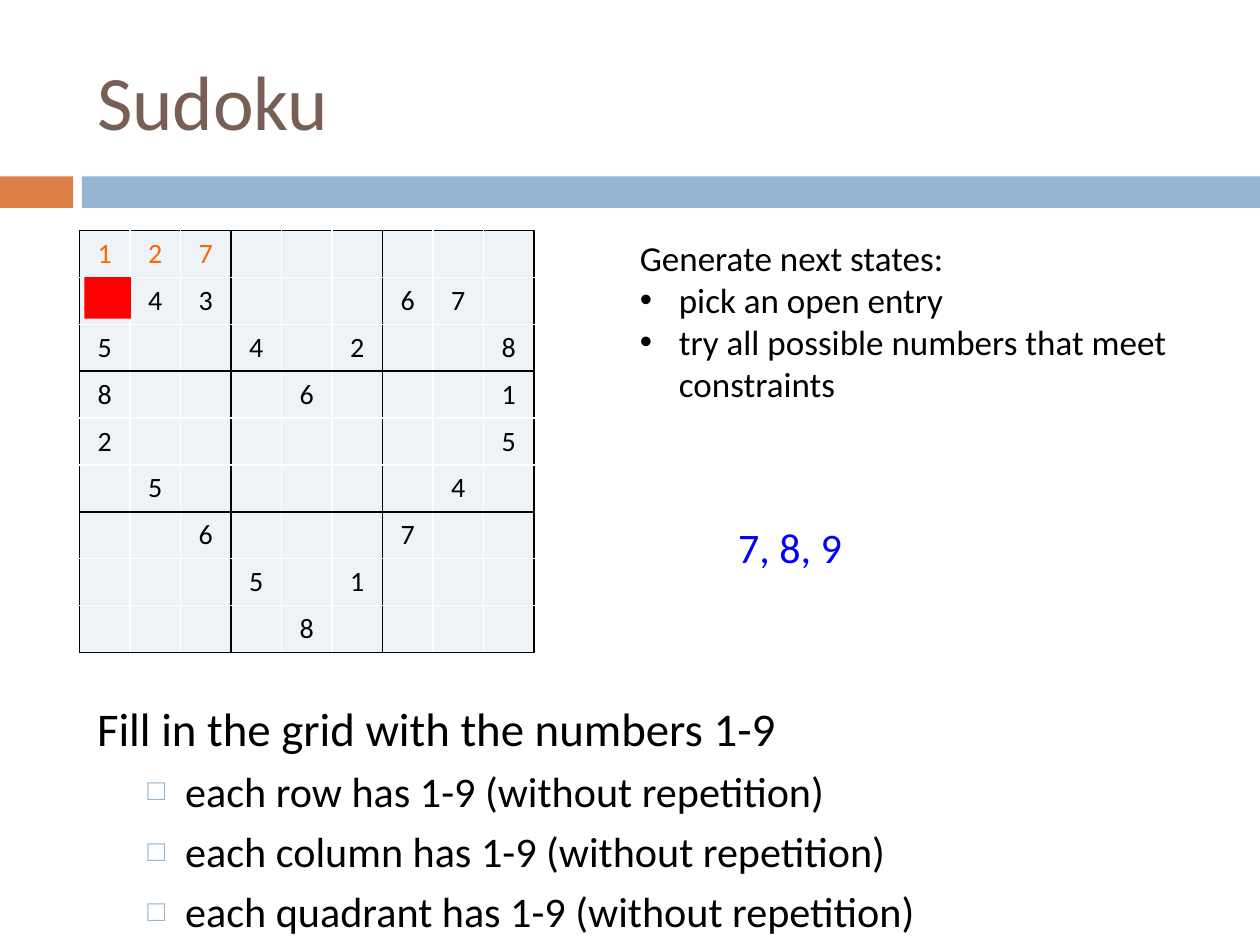
from dataclasses import dataclass
from lxml.etree import SubElement
from pptx import Presentation
from pptx.dml.color import RGBColor
from pptx.enum.shapes import MSO_SHAPE
from pptx.enum.text import MSO_ANCHOR, MSO_AUTO_SIZE, PP_ALIGN
from pptx.oxml import parse_xml
from pptx.oxml.ns import nsdecls, qn
from pptx.util import Inches, Pt

TITLE = "Sudoku"
GRID = [
    "127......",
    ".43...67.",
    "5..4.2..8",
    "8...6...1",
    "2.......5",
    ".5.....4.",
    "..6...7..",
    "...5.1...",
    "....8....",
]
TRIED = 0  # row whose numbers are guesses
GOAL = "Fill in the grid with the numbers 1-9"
RULES = [f"each {part} has 1-9 (without repetition)"
         for part in ("row", "column", "quadrant")]
STEPS_HEAD = "Generate next states:"
STEPS = ["pick an open entry", "try all possible numbers that meet constraints"]
CHOICES = "7, 8, 9"


@dataclass(frozen=True)
class Theme:
    font: str = "Calibri"
    title: str = "775F55"
    accent: str = "DD8047"
    band: str = "94B6D2"
    cell: str = "EEF3F7"
    ink: str = "000000"
    rule: str = "FFFFFF"
    guess: str = "FF6600"
    open: str = "FF0000"
    choice: str = "0000FF"
    title_size: float = 44
    goal_size: float = 26.8
    rule_size: float = 24.1
    step_size: float = 20
    choice_size: float = 24
    cell_size: float = 16


T = Theme()


def style(para, size, color=T.ink):
    font = para.font
    font.name, font.size = T.font, Pt(size)
    font.color.rgb = RGBColor.from_string(color)


def place(shape, left, top, width, height):
    shape.left, shape.top = Inches(left), Inches(top)
    shape.width, shape.height = Inches(width), Inches(height)


def block(slide, color, *box):
    shape = slide.shapes.add_shape(MSO_SHAPE.RECTANGLE, *map(Inches, box))
    shape.shadow.inherit = False
    shape.fill.solid()
    shape.fill.fore_color.rgb = RGBColor.from_string(color)
    shape.line.fill.background()


def bullet(para, char, left, hang, color=None, scale=None):
    """Set indent and bullet; no char means no bullet."""
    props = para._p.get_or_add_pPr()
    props.set("marL", str(Inches(left)))
    props.set("indent", str(Inches(-hang)))
    marks = []
    if color:
        marks.append(f'<a:buClr {nsdecls("a")}><a:srgbClr val="{color}"/></a:buClr>')
    if scale:
        marks.append(f'<a:buSzPct {nsdecls("a")} val="{scale * 1000}"/>')
    if char:
        marks.append(f'<a:buFont {nsdecls("a")} typeface="Arial"/>')
        marks.append(f'<a:buChar {nsdecls("a")} char="{char}"/>')
    else:
        marks.append(f'<a:buNone {nsdecls("a")}/>')
    end = props.find(qn("a:defRPr"))
    for mark in map(parse_xml, marks):
        if end is None:
            props.append(mark)
        else:
            end.addprevious(mark)


def border(cell, row, col):
    """Black lines around each quadrant, white lines inside it."""
    props = cell._tc.get_or_add_tcPr()
    edges = [("L", col % 3 == 0), ("R", col % 3 == 2),
             ("T", row % 3 == 0), ("B", row % 3 == 2)]
    for at, (side, dark) in enumerate(edges):
        color = T.ink if dark else T.rule
        props.insert(at, parse_xml(
            f'<a:ln{side} {nsdecls("a")} w="12700"><a:solidFill>'
            f'<a:srgbClr val="{color}"/></a:solidFill></a:ln{side}>'))


def add_grid(slide):
    size = len(GRID)
    frame = slide.shapes.add_table(size, size, Inches(0.63), Inches(1.83),
                                   Inches(3.61), Inches(0.35 * size))
    table = frame.table
    table.first_row = table.horz_banding = False
    for row, line in enumerate(GRID):
        for col, digit in enumerate(line):
            cell = table.cell(row, col)
            cell.fill.solid()
            cell.fill.fore_color.rgb = RGBColor.from_string(T.cell)
            border(cell, row, col)
            para = cell.text_frame.paragraphs[0]
            if digit == ".":
                SubElement(para._p, qn("a:endParaRPr"), sz=str(T.cell_size * 100))
                continue
            para.text = digit
            para.alignment = PP_ALIGN.CENTER
            style(para, T.cell_size, T.guess if row == TRIED else T.ink)


def add_body(body):
    place(body, 0.67, 5.5, 8.92, 1.75)
    frame = body.text_frame
    frame.auto_size = MSO_AUTO_SIZE.NONE
    para = frame.paragraphs[0]
    para.text, para.space_before = GOAL, Pt(7)
    style(para, T.goal_size)
    bullet(para, None, 0, 0)
    for rule in RULES:
        para = frame.add_paragraph()
        para.text, para.level, para.space_before = rule, 1, Pt(5.5)
        style(para, T.rule_size)
        bullet(para, "□", 0.7, 0.3, T.band, 70)


def add_box(slide, text, size, color, wrap, *box):
    frame = slide.shapes.add_textbox(*map(Inches, box)).text_frame
    frame.word_wrap = wrap
    frame.auto_size = MSO_AUTO_SIZE.SHAPE_TO_FIT_TEXT
    frame.paragraphs[0].text = text
    style(frame.paragraphs[0], size, color)
    return frame


def main():
    deck = Presentation()
    deck.slide_width, deck.slide_height = Inches(10), Inches(7.5)
    slide = deck.slides.add_slide(deck.slide_layouts[1])
    block(slide, T.accent, 0, 1.4, 0.58, 0.25)
    block(slide, T.band, 0.65, 1.4, 9.35, 0.25)

    title = slide.shapes.title
    place(title, 0.67, 0.25, 8.92, 1.08)
    title.text_frame.text = TITLE
    title.text_frame.vertical_anchor = MSO_ANCHOR.MIDDLE
    head = title.text_frame.paragraphs[0]
    head.alignment = PP_ALIGN.LEFT
    style(head, T.title_size, T.title)

    add_grid(slide)
    add_body(slide.placeholders[1])

    steps = add_box(slide, STEPS_HEAD, T.step_size, T.ink, True,
                    4.98, 1.83, 4.86, 1.78)
    for step in STEPS:
        para = steps.add_paragraph()
        para.text = step
        style(para, T.step_size)
        bullet(para, "•", 0.31, 0.31)

    block(slide, T.open, 0.67, 2.2, 0.37, 0.33)
    add_box(slide, CHOICES, T.choice_size, T.choice, False,
            5.76, 4.09, 1.09, 0.5)
    deck.save("out.pptx")


if __name__ == "__main__":
    main()
